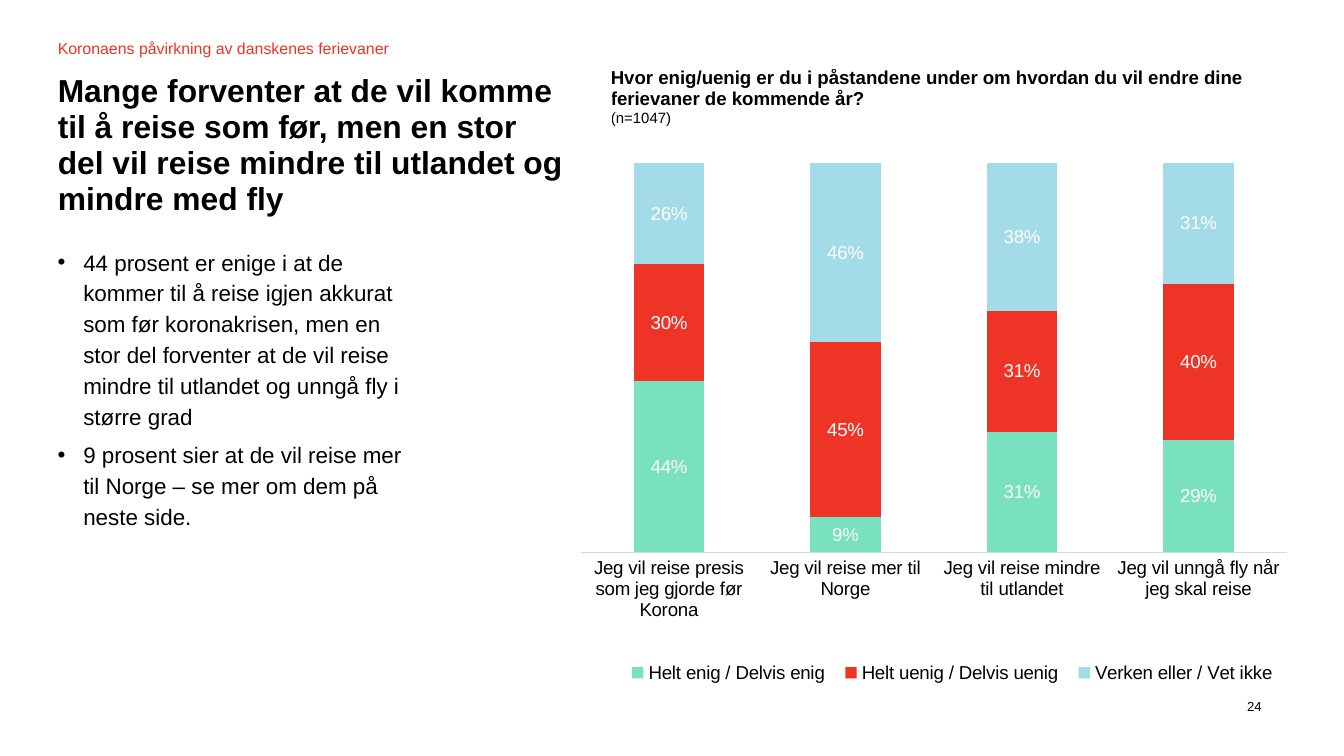
from lxml import etree
from pptx import Presentation, util as u
from pptx.chart.data import CategoryChartData
from pptx.dml.color import RGBColor
from pptx.enum import chart as ch, text
from pptx.oxml import parse_xml
from pptx.oxml.ns import nsdecls, qn

PX = 4572


def box(*px):
    return [n * PX for n in px]


def style(font, size, color="000000", bold=False):
    font.name = "Arial"
    font.size = u.Pt(size)
    font.bold = bold
    font.color.rgb = RGBColor.from_string(color)


deck = Presentation()
deck.slide_width, deck.slide_height = box(2000, 1125)
slide = deck.slides.add_slide(deck.slide_layouts[5])

title = slide.shapes.title
title.left, title.top, title.width, title.height = box(86, 109, 756, 218)
title.text = ("Mange forventer at de vil komme til å reise som før, men en stor "
              "del vil reise mindre til utlandet og mindre med fly")
kicker = slide.shapes.add_textbox(*box(86, 58, 498, 28))
kicker.text = "Koronaens påvirkning av danskenes ferievaner"
body = slide.shapes.add_textbox(*box(86, 364, 528, 284))
body.text = (
    "44 prosent er enige i at de kommer til å reise igjen akkurat som før "
    "koronakrisen, men en stor del forventer at de vil reise mindre til "
    "utlandet og unngå fly i større grad\n"
    "9 prosent sier at de vil reise mer til Norge – se mer om dem på neste side.")
number = slide.shapes.add_textbox(*box(1856, 1040, 56, 24))
number.text = "24"

for shape, size, color, bold in [
    (title, 17, "000000", True),
    (kicker, 8.5, "ED3426", False),
    (body, 12, "000000", False),
    (number, 7, "000000", False),
]:
    frame = shape.text_frame
    frame.margin_left = frame.margin_right = 0
    frame.margin_top = frame.margin_bottom = 0
    frame.auto_size = text.MSO_AUTO_SIZE.NONE
    frame.vertical_anchor = text.MSO_ANCHOR.TOP
    frame.word_wrap = shape is not kicker
    for i, para in enumerate(frame.paragraphs):
        para.alignment = text.PP_ALIGN.LEFT
        if shape is body:
            props = para._p.get_or_add_pPr()
            props.set("marL", str(38 * PX))
            props.set("indent", str(-38 * PX))
            etree.SubElement(props, qn("a:buFont")).set("typeface", "Arial")
            etree.SubElement(props, qn("a:buChar")).set("char", "•")
            para.line_spacing = 1.15
            para.space_before = u.Pt(2 if i else 0)
            para.space_after = u.Pt(2)
        style(para.font, size, color, bold)
title.text_frame.paragraphs[0].line_spacing = 0.95

table = slide.shapes.add_table(1, 1, *box(909, 101, 1006, 110)).table
table.first_row = table.horz_banding = False
cell = table.cell(0, 0)
cell.fill.background()
cell.margin_left = cell.margin_top = cell.margin_right = 0
cell.margin_bottom = 16 * PX
cell.text = ("Hvor enig/uenig er du i påstandene under om hvordan du vil endre "
             "dine ferievaner de kommende år?\u00a0\n(n=1047)".replace("\u00a0", ""))
head, base = cell.text_frame.paragraphs
style(head.font, 10, bold=True)
style(base.font, 8)

data = CategoryChartData(number_format="0%")
data.categories = [
    "Jeg vil reise presis som jeg gjorde før Korona",
    "Jeg vil reise mer til Norge",
    "Jeg vil reise mindre til utlandet",
    "Jeg vil unngå fly når jeg skal reise",
]
data.add_series("Helt enig / Delvis enig", [0.44, 0.09, 0.31, 0.29])
data.add_series("Helt uenig / Delvis uenig", [0.3, 0.45, 0.31, 0.4])
data.add_series("Verken eller / Vet ikke", [0.26, 0.46, 0.38, 0.31])
chart = slide.shapes.add_chart(
    ch.XL_CHART_TYPE.COLUMN_STACKED_100, *box(842, 209, 1106, 852), data).chart
style(chart.font, 10)
chart.has_title = False
chart.has_legend = True
legend = chart.legend
legend.position = ch.XL_LEGEND_POSITION.BOTTOM
legend.include_in_layout = False
style(legend.font, 10)

axis = chart.category_axis
axis.major_tick_mark = ch.XL_TICK_MARK.NONE
axis.format.line.color.rgb = RGBColor.from_string("D9D9D9")
axis.format.line.width = u.Pt(0.75)
style(axis.tick_labels.font, 10)
scale = chart.value_axis
scale.visible = False
scale.has_major_gridlines = False
scale.major_unit = 0.2
scale.minimum_scale, scale.maximum_scale = 0, 1

plot = chart.plots[0]
plot.gap_width, plot.overlap = 150, 100
plot.vary_by_categories = False
for series, color in zip(plot.series, ["7AE1BF", "ED3426", "A4DBE8"]):
    series.format.fill.solid()
    series.format.fill.fore_color.rgb = RGBColor.from_string(color)
    labels = series.data_labels
    labels.show_value = True
    labels.number_format = "0%"
    labels.number_format_is_linked = False
    style(labels.font, 10, "FFFFFF")

area = chart._chartSpace.chart.plotArea
key = legend._element
for node, spot, inner, x, y, w, h in [
    (area, 0, '<c:layoutTarget val="inner"/>', 0.02, 0.04, 0.95, 0.68),
    (key, 1, "", 0.07, 0.89, 0.9, 0.08),
]:
    for old in node.findall(qn("c:layout")):
        node.remove(old)
    sizes = "".join(f'<c:{tag} val="{val}"/>'
                    for tag, val in zip("xywh", (x, y, w, h)))
    node.insert(spot, parse_xml(
        f'<c:layout {nsdecls("c")}><c:manualLayout>{inner}'
        f'<c:xMode val="edge"/><c:yMode val="edge"/>{sizes}'
        '</c:manualLayout></c:layout>'))

deck.save("out.pptx")
